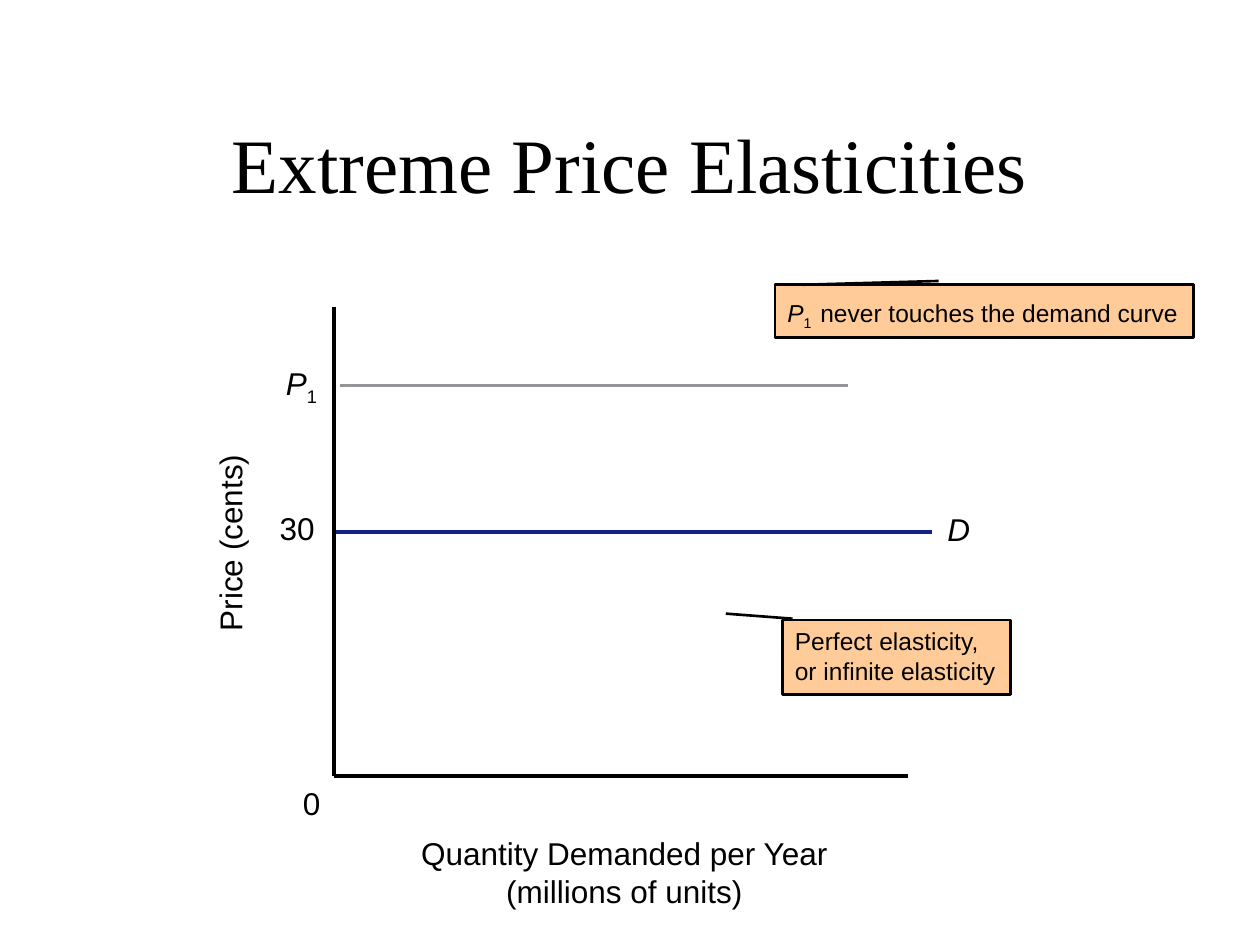
import pptx
import pptx.util
import pptx.dml.color
import pptx.enum.shapes
import pptx.enum.text
import pptx.oxml

Inches = pptx.util.Inches
Pt = pptx.util.Pt
Align = pptx.enum.text.PP_ALIGN
Anchor = pptx.enum.text.MSO_ANCHOR
Shape = pptx.enum.shapes.MSO_SHAPE
Line = pptx.enum.shapes.MSO_CONNECTOR


def color(code):
    return pptx.dml.color.RGBColor.from_string(code)


def write(para, text, size=18, font="Arial", ink="000000", slant=False, base=0):
    for i, part in enumerate(text.split("\n")):
        if i:
            para.add_line_break()
        run = para.add_run()
        run.text = part
        run.font.size = Pt(size)
        run.font.name = font
        run.font.italic = slant
        run.font.color.rgb = color(ink)
        if base:
            run._r.get_or_add_rPr().set("baseline", str(base * 1000))


class Deck:
    ink = "000000"
    note = "FFCC99"
    small = 14

    def __init__(self, slide):
        self.slide = slide

    def fill(self, frame, runs, align, anchor=Anchor.TOP):
        frame.word_wrap = True
        frame.vertical_anchor = anchor
        frame.margin_left = frame.margin_right = Inches(0.1)
        frame.margin_top = frame.margin_bottom = Inches(0.05)
        para = frame.paragraphs[0]
        para.alignment = align
        for text, style in runs:
            write(para, text, **style)

    def title(self, text, box):
        head = self.slide.shapes.title
        head.left, head.top, head.width, head.height = map(Inches, box)
        style = dict(size=44, font="Times New Roman")
        self.fill(head.text_frame, [(text, style)], Align.CENTER, Anchor.MIDDLE)

    def label(self, runs, box, align=Align.LEFT, turn=0):
        shape = self.slide.shapes.add_textbox(*map(Inches, box))
        shape.rotation = turn
        self.fill(shape.text_frame, runs, align)

    def line(self, start, end, ink=ink, width=2):
        ends = map(Inches, (*start, *end))
        line = self.slide.shapes.add_connector(Line.STRAIGHT, *ends)
        line.line.color.rgb = color(ink)
        line.line.width = Pt(width)
        line._element.spPr.append(pptx.oxml.parse_xml(
            '<a:effectLst xmlns:a="http://schemas.openxmlformats.org/drawingml/2006/main"/>'))

    def callout(self, runs, box, start, tip):
        left, top, width, height = box
        shape = self.slide.shapes.add_shape(Shape.LINE_CALLOUT_1, *map(Inches, box))
        for i, (x, y) in enumerate((start, tip)):
            shape.adjustments[2 * i] = (y - top) / height
            shape.adjustments[2 * i + 1] = (x - left) / width
        shape.shadow.inherit = False
        shape.fill.solid()
        shape.fill.fore_color.rgb = color(self.note)
        shape.line.color.rgb = color(self.ink)
        shape.line.width = Pt(1.5)
        self.fill(shape.text_frame, runs, Align.LEFT)


def main():
    show = pptx.Presentation()
    show.slide_width, show.slide_height = Inches(10), Inches(7.5)
    deck = Deck(show.slides.add_slide(show.slide_layouts[5]))
    left, base, price = 2.65, 6.16, 4.22

    deck.title("Extreme Price Elasticities", (0.75, 0.67, 8.5, 1.25))
    deck.label([("Quantity Demanded per Year\n(millions of units)", {})],
               (2.66, 6.57, 4.59, 0.7), Align.CENTER)
    deck.label([("Price (cents)", {})], (-0.07, 4.11, 3.79, 0.4), Align.CENTER, 270)

    deck.line((left, 2.44), (left, base))
    deck.line((left, base), (7.21, base))
    deck.line((2.7, 3.06), (6.73, 3.06), "939598")

    deck.label([("30", {})], (2.12, 3.99, 0.52, 0.4))
    deck.label([("P", dict(slant=True)), ("1", dict(base=-25))], (2.17, 2.84, 0.46, 0.4))
    deck.label([("0", {})], (2.12, 6.17, 0.52, 0.4), Align.RIGHT)

    small = dict(size=deck.small)
    deck.callout([("P", dict(small, slant=True)), ("1", dict(small, base=-25)),
                  (" ", dict(slant=True)), ("never touches the demand curve", small)],
                 (6.15, 2.26, 3.32, 0.42), (6.37, 2.26), (7.45, 2.23))
    deck.callout([("Perfect elasticity,\nor infinite elasticity", small)],
                 (6.21, 4.92, 1.81, 0.59), (6.29, 4.91), (5.76, 4.87))

    deck.line((2.67, price), (7.4, price), "0F218B", 2.25)
    deck.label([("D", dict(slant=True))], (7.42, 4, 0.38, 0.4))
    show.save("out.pptx")


if __name__ == "__main__":
    main()
